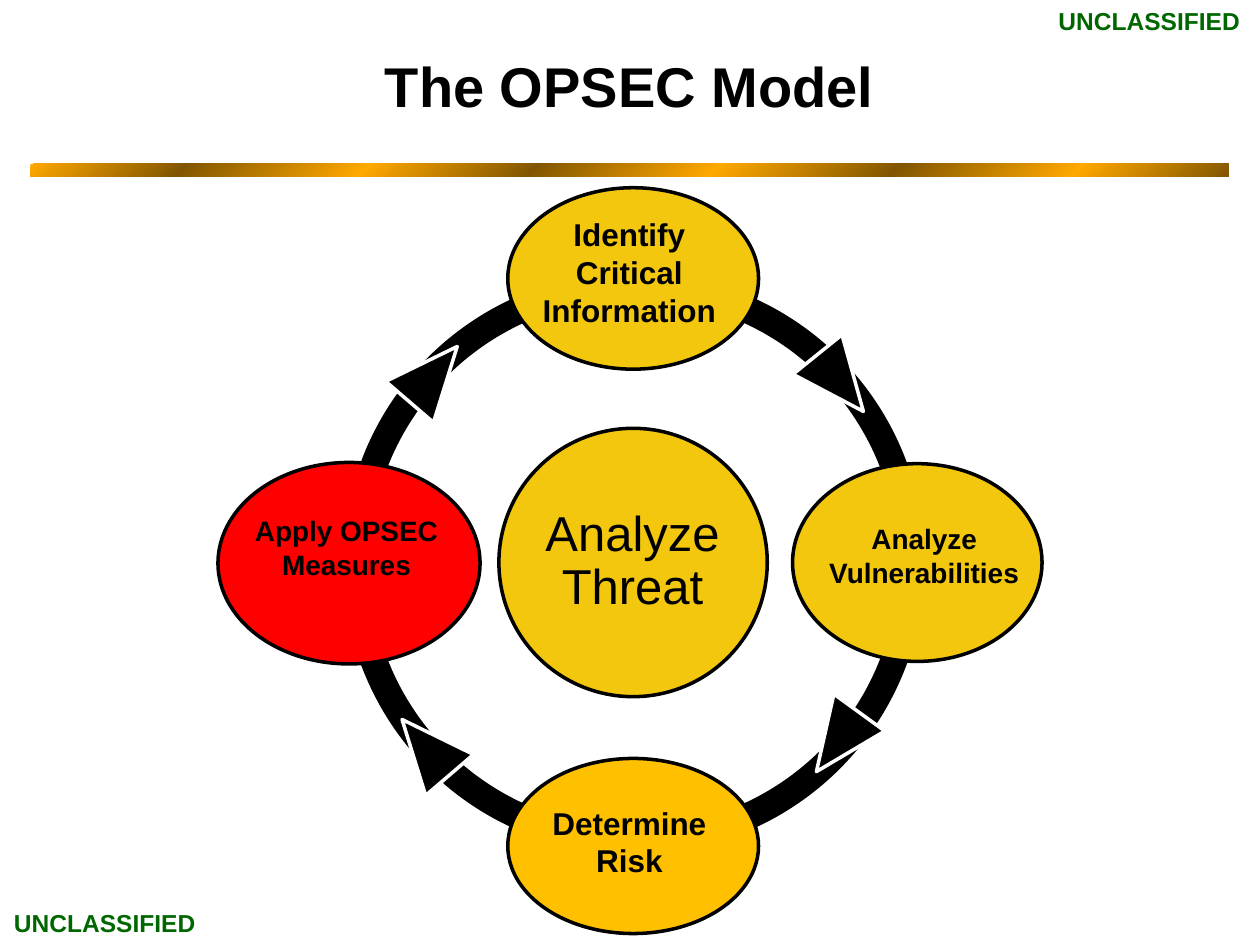
from lxml.etree import SubElement
from pptx import Presentation
from pptx.dml.color import RGBColor
from pptx.enum.shapes import MSO_SHAPE
from pptx.enum.text import MSO_ANCHOR, PP_ALIGN
from pptx.oxml.ns import qn
from pptx.util import Inches, Pt

COLORS = {
    "black": "000000", "white": "FFFFFF", "green": "006600", "gold": "F2C70E",
    "amber": "FFC000", "red": "FF0000", "bright": "FFA800", "brown": "825600",
}

deck = Presentation()
deck.slide_width, deck.slide_height = Inches(10), Inches(7.5)
page = deck.slides.add_slide(deck.slide_layouts[6])


def add_figure(preset, center_x, center_y, width, height, fill, line=None):
    """Add a shape by its centre and size, in percent of the slide."""
    x_unit, y_unit = deck.slide_width / 100, deck.slide_height / 100
    figure = page.shapes.add_shape(
        preset,
        round((center_x - width / 2) * x_unit), round((center_y - height / 2) * y_unit),
        round(width * x_unit), round(height * y_unit))
    figure.shadow.inherit = False
    figure.fill.solid()
    figure.fill.fore_color.rgb = RGBColor.from_string(COLORS[fill])
    if line:
        figure.line.color.rgb = RGBColor.from_string(COLORS[line])
        figure.line.width = Pt(2)
    else:
        figure.line.fill.background()
    return figure


def add_label(text, center_x, center_y, width, height, size, color="black", bold=True,
              align=PP_ALIGN.CENTER, anchor=MSO_ANCHOR.TOP, wrap=True):
    """Add a text box by its centre and size, in percent of the slide."""
    x_unit, y_unit = deck.slide_width / 100, deck.slide_height / 100
    box = page.shapes.add_textbox(
        round((center_x - width / 2) * x_unit), round((center_y - height / 2) * y_unit),
        round(width * x_unit), round(height * y_unit))
    frame = box.text_frame
    frame.word_wrap = wrap
    frame.vertical_anchor = anchor
    para = frame.paragraphs[0]
    para.text = text
    para.alignment = align
    para.font.name, para.font.size, para.font.bold = "Arial", Pt(size), bold
    para.font.color.rgb = RGBColor.from_string(COLORS[color])
    return box


# Striped rule under the title
rule = add_figure(MSO_SHAPE.RECTANGLE, 49.95, 18, 95.1, 1.33, "bright")
rule.element.spPr.find(qn("a:xfrm")).set("flipV", "1")
rule.fill.gradient()
gradient = rule.element.spPr.find(qn("a:gradFill"))
stops = gradient.find(qn("a:gsLst"))
for stop in list(stops):
    stops.remove(stop)
for index, position in enumerate((0, 13, 28, 42, 57, 72, 87, 100)):
    stop = SubElement(stops, qn("a:gs"), pos=str(position * 1000))
    SubElement(stop, qn("a:srgbClr"), val=COLORS[("bright", "brown")[index % 2]])
gradient.find(qn("a:lin")).set("ang", str(315 * 60000))

# Classification marks and title
for center_x, center_y in ((8.25, 97.73), (91.15, 2.27)):
    add_label("UNCLASSIFIED", center_x, center_y, 16.5, 4.53, 14, "green",
              align=PP_ALIGN.RIGHT, wrap=False)
add_label("The OPSEC Model", 49.95, 9, 85.1, 16.67, 32, anchor=MSO_ANCHOR.MIDDLE)

# Ring of four quarter arcs; a quarter turn is 54 adjustment units
for start in (108, 54, 0, 162):
    arc = add_figure(MSO_SHAPE.BLOCK_ARC, 50.3, 59.6, 46.2, 61.6, "black")
    arc.adjustments[0] = start
    arc.adjustments[1] = (start + 54) % 216
    arc.adjustments[2] = 0.046

# Hub
add_figure(MSO_SHAPE.OVAL, 50.25, 59.53, 21.3, 28.4, "gold", "black")
hub = add_label("Analyze Threat", 50.2, 59.47, 15, 20, 28, bold=False,
                anchor=MSO_ANCHOR.MIDDLE).text_frame
hub.margin_left = hub.margin_right = hub.margin_top = hub.margin_bottom = Inches(0.04)
hub.paragraphs[0].line_spacing = 0.9

# Steps: oval area, fill, text, text area, text size
steps = [
    ((50.25, 29.47, 19.9, 19.2), "gold",
     "Identify Critical Information", (49.95, 28.87, 18.3, 13.47), 18),
    ((72.8, 59.53, 19.8, 20.93), "gold",
     "Analyze Vulnerabilities", (73.35, 58.8, 18.3, 8.53), 16),
    ((50.25, 89.53, 19.9, 18.53), "amber",
     "Determine Risk", (49.95, 89.13, 18.3, 9.47), 18),
    ((27.7, 59.6, 20.8, 21.33), "red",
     "Apply OPSEC Measures", (27.5, 58, 21.4, 8.53), 16),
]
for oval_area, fill, text, text_area, size in steps:
    add_figure(MSO_SHAPE.OVAL, *oval_area, fill, "black")
    add_label(text, *text_area, size)

# Arrowheads on the ring
for center_x, center_y, rotation in ((66.5, 78.53, 216), (66.7, 40.53, 141.1),
                                     (34.4, 39.6, 40.7), (33.8, 79.07, 319.4)):
    arrowhead = add_figure(MSO_SHAPE.ISOSCELES_TRIANGLE, center_x, center_y,
                           5, 7.73, "black", "white")
    arrowhead.rotation = rotation

deck.save("out.pptx")
